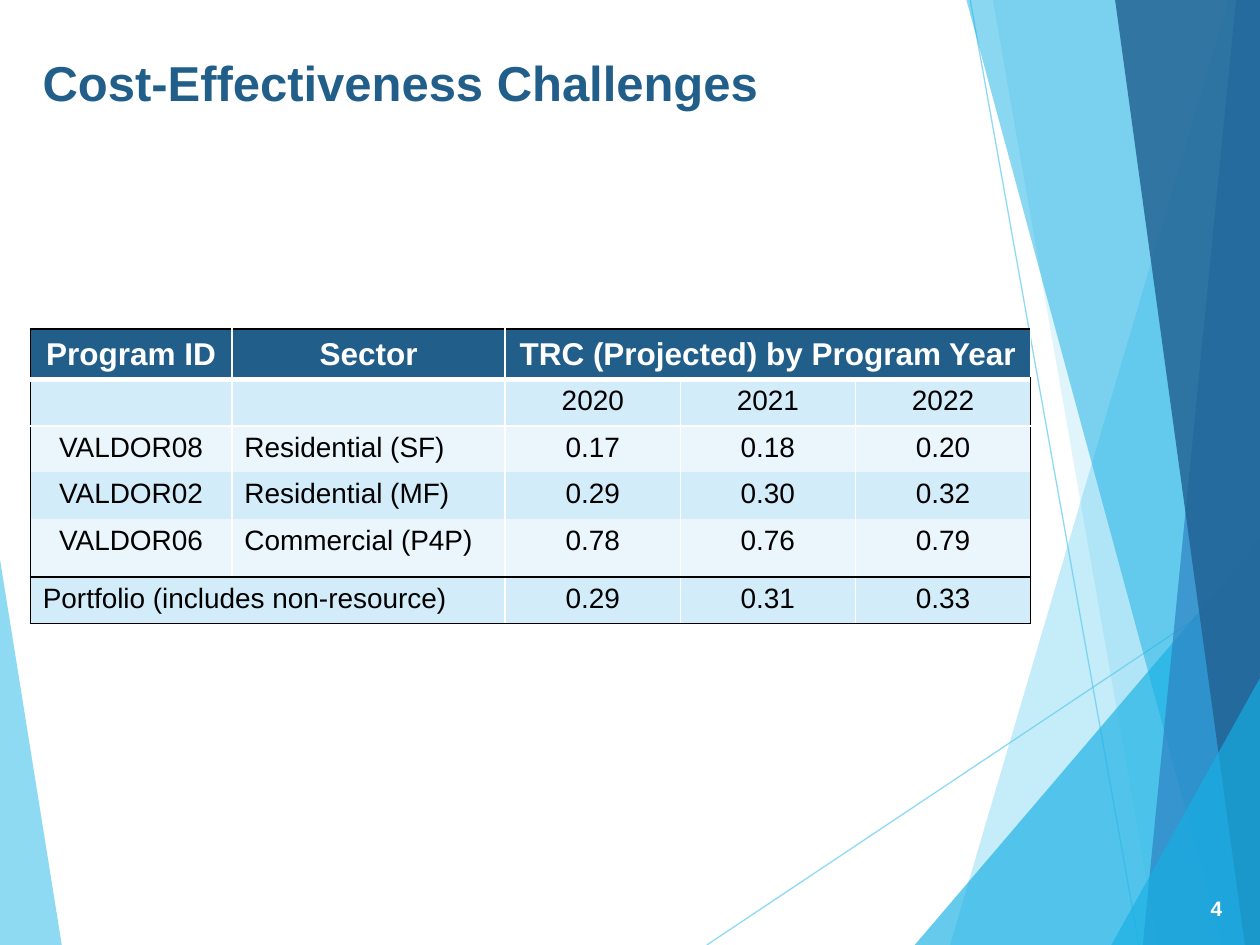
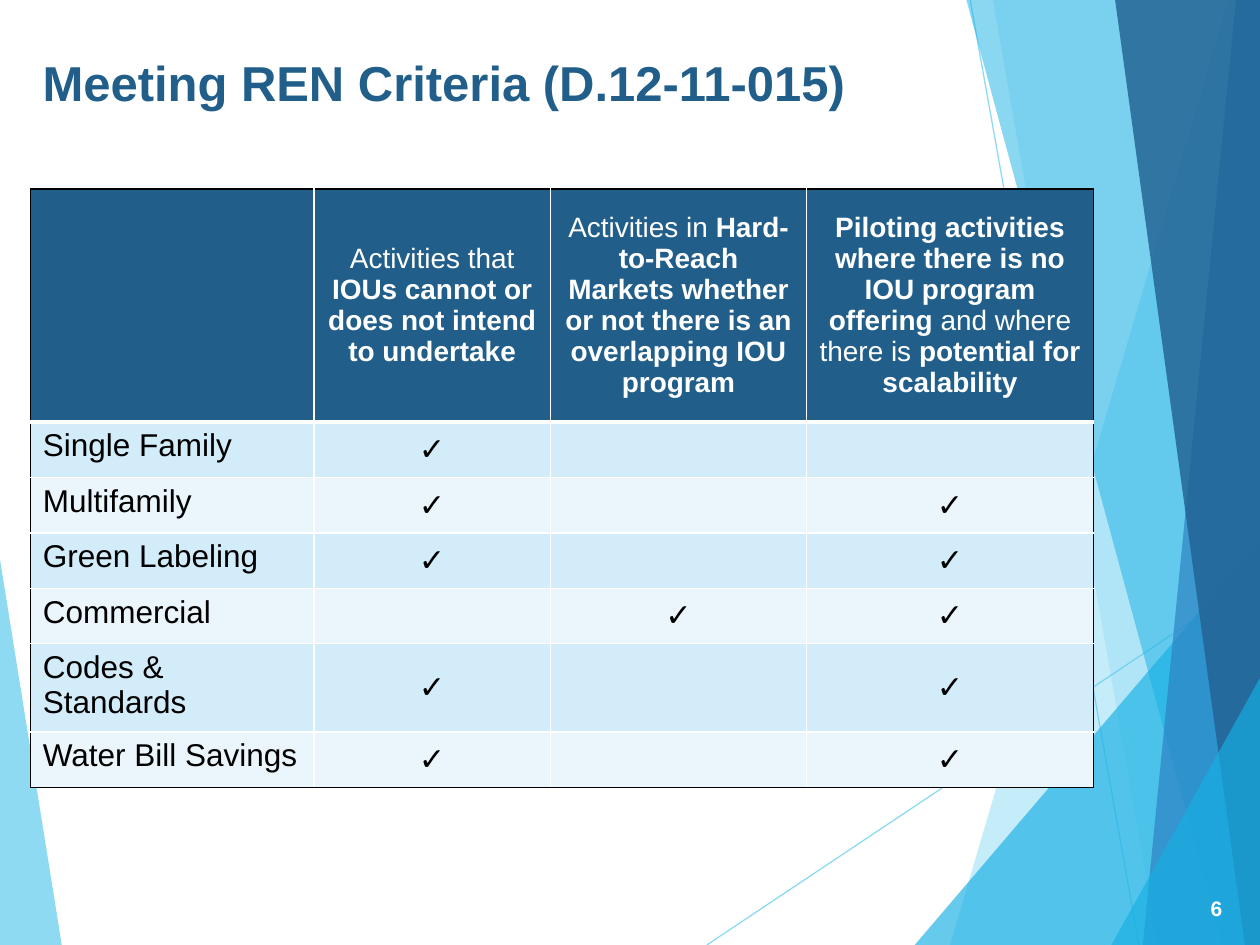
from collections import namedtuple

from lxml.etree import SubElement
from pptx import Presentation
from pptx.dml.color import RGBColor
from pptx.enum.shapes import MSO_CONNECTOR as Connector
from pptx.enum.text import MSO_ANCHOR as Anchor, PP_ALIGN as Align
from pptx.oxml.ns import qn
from pptx.util import Pt

PX = 9144
FONT = "Arial"
CHECK = "✓"
COLORS = {
    "white": "FFFFFF",
    "black": "000000",
    "heading": "215F8A",
    "band_dark": "D2ECF9",
    "band_light": "EAF6FC",
    "sky": "5FCBEF",
    "cyan": "17B0E4",
    "blue": "2E83C3",
    "navy": "226292",
}
Box = namedtuple("Box", "left top width height")
SLIDE = Box(0, 0, 1000, 750)
TITLE = Box(24, 37, 754, 144)
NUMBER = Box(924, 701, 56, 40)

FACETS = [
    ("sky", 36, [(975, 0), (754, 750), (1000, 750), (1000, 0)]),
    ("sky", 20, [(788, 0), (919, 750), (1000, 750), (1000, 0)]),
    ("cyan", 66, [(726, 750), (1000, 429), (1000, 750)]),
    ("cyan", 50, [(767, 0), (970, 750), (1000, 750), (1000, 0)]),
    ("blue", 70, [(981, 0), (907, 750), (1000, 750), (1000, 0)]),
    ("navy", 82, [(885, 0), (988, 750), (1000, 750), (1000, 0)]),
    ("cyan", 66, [(882, 750), (1000, 538), (1000, 750)]),
]
LEFT_FACET = ("sky", 70, [(0, 444), (49, 750), (0, 750)])
RAYS = [((561, 750), (1000, 457)), ((770, 0), (904, 750))]

EDGE = ("black", 1)
INNER = ("white", 1)
HEADER_RULE = ("white", 3)


def rgb(name):
    return RGBColor.from_string(COLORS[name])


def emu(*lengths):
    return [length * PX for length in lengths]


def set_opacity(shape, percent):
    for color in shape.element.spPr.iter(qn("a:srgbClr")):
        SubElement(color, qn("a:alpha"), val=str(percent * 1000))


def add_span(para, text, size, color, bold):
    span = para.add_run()
    span.text = text
    span.font.name = FONT
    span.font.size = Pt(size)
    span.font.bold = bold
    span.font.color.rgb = rgb(color)


def add_facet(page, box, facet):
    color, opacity, points = facet
    corners = [(box.left + x, box.top + y) for x, y in points]
    builder = page.shapes.build_freeform(*corners[0], scale=PX)
    builder.add_line_segments(corners[1:], close=True)
    shape = builder.convert_to_shape()
    shape.shadow.inherit = False
    shape.fill.solid()
    shape.fill.fore_color.rgb = rgb(color)
    shape.line.fill.background()
    set_opacity(shape, opacity)


def add_ray(page, box, start, end):
    points = [box.left + start[0], box.top + start[1],
              box.left + end[0], box.top + end[1]]
    ray = page.shapes.add_connector(Connector.STRAIGHT, *emu(*points))
    ray.line.color.rgb = rgb("sky")
    ray.line.width = Pt(0.75)
    set_opacity(ray, 70)
    SubElement(ray.element.spPr, qn("a:effectLst"))


def add_backdrop(page, box):
    add_facet(page, box, LEFT_FACET)
    for start, end in RAYS:
        add_ray(page, box, start, end)
    for facet in FACETS:
        add_facet(page, box, facet)


def add_label(page, box, text, size, color, align, anchor):
    frame = page.shapes.add_textbox(*emu(*box)).text_frame
    frame.word_wrap = True
    frame.vertical_anchor = anchor
    para = frame.paragraphs[0]
    para.alignment = align
    add_span(para, text, size, color, True)


def add_border(cell, side, rule):
    color, width = rule or ("white", 0)
    props = cell._tc.get_or_add_tcPr()
    line = SubElement(props, qn(f"a:ln{side}"), w=str(int(Pt(width))))
    if rule:
        fill = SubElement(line, qn("a:solidFill"))
        SubElement(fill, qn("a:srgbClr"), val=COLORS[color])
    else:
        SubElement(line, qn("a:noFill"))


def fill_cell(cell, spans, size, is_header, is_left):
    frame = cell.text_frame
    para = frame.paragraphs[0]
    para.alignment = Align.LEFT if is_left else Align.CENTER
    for text, bold in spans:
        add_span(para, text, size, "white" if is_header else "black", bold)
    if not spans:
        SubElement(para._p, qn("a:endParaRPr"), sz=str(size * 100))
    is_check = any(text == CHECK for text, bold in spans)
    cell.vertical_anchor = Anchor.MIDDLE if is_header or is_check else Anchor.TOP


def add_grid(page, box, widths, heights, rows, sizes, rules, left_cells, merges=()):
    frame = page.shapes.add_table(len(heights), len(widths), *emu(*box))
    table = frame.table
    table.horz_banding = False
    for column, width in zip(table.columns, widths):
        column.width = width * PX
    for row, height in zip(table.rows, heights):
        row.height = height * PX
    verticals = [EDGE] + [INNER] * (len(widths) - 1) + [EDGE]
    for r, row in enumerate(rows):
        band = "heading" if r == 0 else "band_dark" if r % 2 else "band_light"
        for c, spans in enumerate(row):
            cell = table.cell(r, c)
            borders = zip("LRTB", (verticals[c], verticals[c + 1], rules[r], rules[r + 1]))
            for side, rule in borders:
                add_border(cell, side, rule)
            cell.fill.solid()
            cell.fill.fore_color.rgb = rgb(band)
            fill_cell(cell, spans, sizes[min(r, 1)], r == 0, (r, c) in left_cells)
    for first, last in merges:
        table.cell(*first).merge(table.cell(*last))


def plain_row(texts, bold=False):
    return [[(text, bold)] if text else [] for text in texts]


def add_cost_table(page, box):
    header = ["Program ID", "Sector", "TRC (Projected) by Program Year", "", ""]
    body = [
        ["", "", "2020", "2021", "2022"],
        ["VALDOR08", "Residential (SF)", "0.17", "0.18", "0.20"],
        ["VALDOR02", "Residential (MF)", "0.29", "0.30", "0.32"],
        ["VALDOR06", "Commercial (P4P)", "0.78", "0.76", "0.79"],
        ["Portfolio (includes non-resource)", "", "0.29", "0.31", "0.33"],
    ]
    add_grid(
        page, box,
        widths=[160, 217, 139, 139, 139],
        heights=[38, 37, 37, 37, 46, 37],
        rows=[plain_row(header, True)] + [plain_row(row) for row in body],
        sizes=(18, 16),
        rules=[EDGE, HEADER_RULE, INNER, None, None, EDGE, EDGE],
        left_cells={(2, 1), (3, 1), (4, 1), (5, 0)},
        merges=[((0, 2), (0, 4)), ((5, 0), (5, 1))],
    )


def add_criteria_table(page, box):
    header = [
        [],
        [("Activities that ", False),
         ("IOUs cannot or does not intend to undertake", True)],
        [("Activities in ", False),
         ("Hard-to-Reach Markets whether or not there is an overlapping IOU program", True)],
        [("Piloting activities where there is no IOU program offering ", True),
         ("and where there is ", False),
         ("potential for scalability", True)],
    ]
    met_criteria = {
        "Single Family": {1},
        "Multifamily": {1, 3},
        "Green Labeling": {1, 3},
        "Commercial": {2, 3},
        "Codes & Standards": {1, 3},
        "Water Bill Savings": {1, 3},
    }
    body = [
        [[(name, False)]] + [[(CHECK, True)] if c in met else [] for c in (1, 2, 3)]
        for name, met in met_criteria.items()
    ]
    count = len(body)
    add_grid(
        page, box,
        widths=[225, 188, 203, 228],
        heights=[185, 44, 44, 44, 44, 66, 44],
        rows=[header] + body,
        sizes=(16, 18),
        rules=[EDGE, HEADER_RULE] + [INNER] * (count - 1) + [EDGE],
        left_cells={(r, 0) for r in range(1, count + 1)},
    )


def add_page(deck, title, number, add_table, box):
    page = deck.slides.add_slide(deck.slide_layouts[6])
    add_backdrop(page, SLIDE)
    add_label(page, TITLE, title, 28, "heading", Align.LEFT, Anchor.TOP)
    add_table(page, box)
    add_label(page, NUMBER, number, 12, "white", Align.RIGHT, Anchor.MIDDLE)


def main():
    deck = Presentation()
    deck.slide_width, deck.slide_height = emu(SLIDE.width, SLIDE.height)
    add_page(deck, "Cost-Effectiveness Challenges", "4",
             add_cost_table, Box(24, 261, 794, 232))
    add_page(deck, "Meeting REN Criteria (D.12-11-015)", "6",
             add_criteria_table, Box(24, 150, 844, 471))
    deck.save("out.pptx")


if __name__ == "__main__":
    main()
